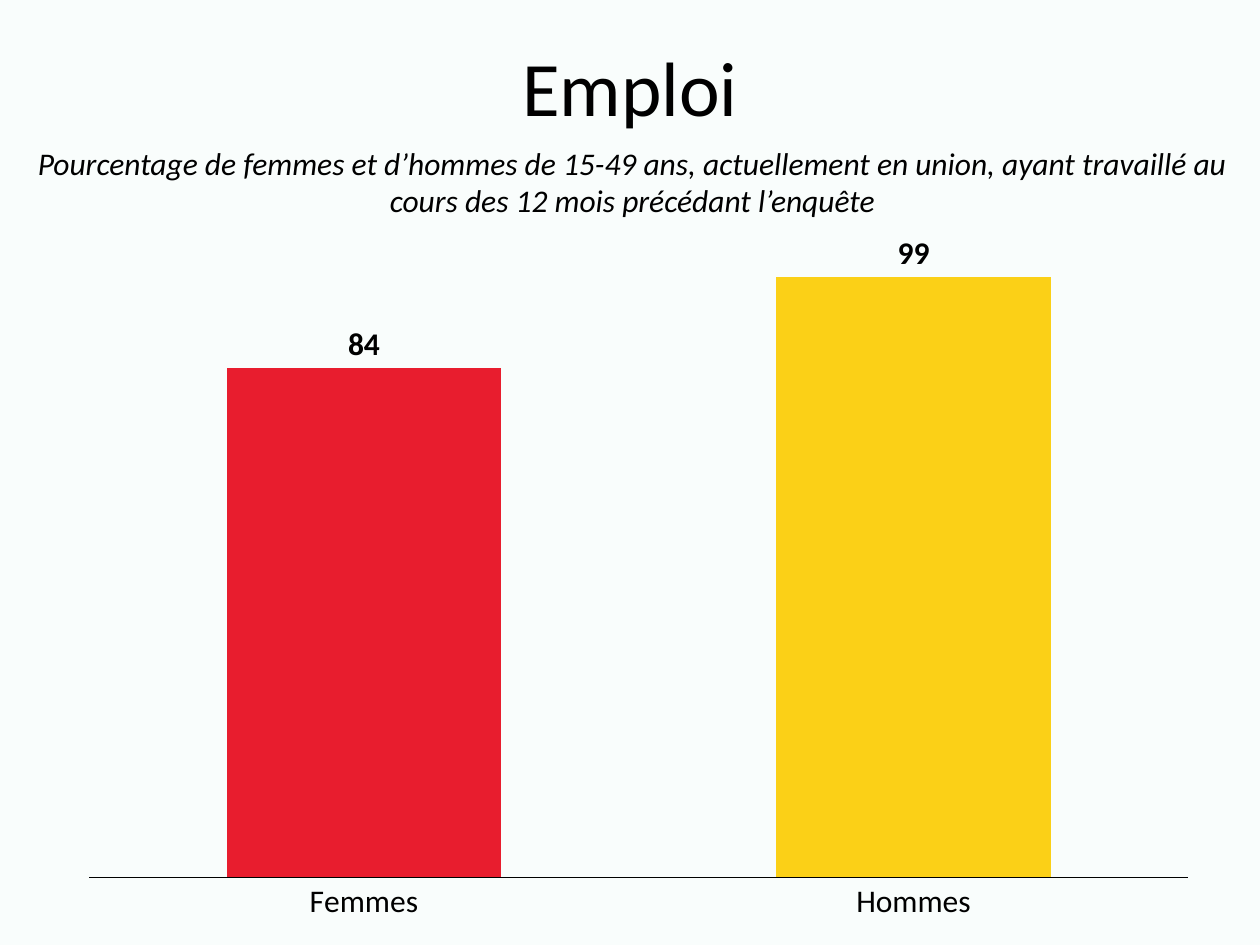
from lxml.etree import SubElement
from pptx import Presentation
from pptx.chart.data import CategoryChartData
from pptx.dml.color import RGBColor
from pptx.enum.chart import XL_CHART_TYPE, XL_LABEL_POSITION, XL_TICK_MARK
from pptx.enum.text import MSO_ANCHOR, PP_ALIGN
from pptx.oxml.ns import qn
from pptx.util import Inches, Pt

BLACK = RGBColor(0x00, 0x00, 0x00)
RED = RGBColor(0xE8, 0x1D, 0x2E)
YELLOW = RGBColor(0xFB, 0xD0, 0x17)
PALE = RGBColor(0xF9, 0xFD, 0xFC)
FONT = "Calibri"


def style(font, size, bold=False, italic=False):
    """Set the common typeface and black colour at a given size."""
    font.name, font.size = FONT, Pt(size)
    font.bold, font.italic = bold, italic
    font.color.rgb = BLACK


def place(sp, left, top, width, height):
    """Position a shape, in inches."""
    sp.left, sp.top = Inches(left), Inches(top)
    sp.width, sp.height = Inches(width), Inches(height)


prs = Presentation()
prs.slide_width, prs.slide_height = Inches(10), Inches(7.5)
slide = prs.slides.add_slide(prs.slide_layouts[5])
slide.background.fill.solid()
slide.background.fill.fore_color.rgb = PALE

# Title
title = slide.shapes.title
place(title, 0, 0, 10, 1.45)
tf = title.text_frame
tf.text = "Emploi"
tf.vertical_anchor = MSO_ANCHOR.MIDDLE
p = tf.paragraphs[0]
p.alignment = PP_ALIGN.CENTER
p.line_spacing = 0.9
style(p.runs[0].font, 44)

# Column chart
data = CategoryChartData()
data.categories = ["Femmes", "Hommes"]
data.add_series("Series 1", (84, 99))
chart = slide.shapes.add_chart(
    XL_CHART_TYPE.COLUMN_CLUSTERED,
    Inches(0.51), Inches(1.8), Inches(9.03), Inches(5.7), data).chart
chart.has_legend = False
chart.has_title = False
style(chart.font, 10)

category_axis = chart.category_axis
category_axis.major_tick_mark = XL_TICK_MARK.NONE
category_axis.format.line.color.rgb = BLACK
category_axis.format.line.width = Pt(0.75)
style(category_axis.tick_labels.font, 18)

value_axis = chart.value_axis
value_axis.minimum_scale, value_axis.maximum_scale = 0, 100
value_axis.has_major_gridlines = False
value_axis.visible = False

plot = chart.plots[0]
plot.gap_width = 100
plot.vary_by_categories = False
series = plot.series[0]
series.format.fill.solid()
series.format.fill.fore_color.rgb = RED
for i, color in enumerate((RED, YELLOW)):
    fill = series.points[i].format.fill
    fill.solid()
    fill.fore_color.rgb = color

labels = series.data_labels
labels.show_value = True
labels.position = XL_LABEL_POSITION.OUTSIDE_END
style(labels.font, 18, bold=True)

# Inner plot area, as shares of the chart
plot_area = plot_area_xml = chart.plots[0]._element.getparent()
layout = plot_area.find(qn("c:layout"))
if layout is None:
    layout = SubElement(plot_area, qn("c:layout"))
    plot_area.insert(0, layout)
manual = SubElement(layout, qn("c:manualLayout"))
for tag, value in (("layoutTarget", "inner"), ("xMode", "edge"), ("yMode", "edge"),
                   ("x", "0.022"), ("y", "0.062"), ("w", "0.966"), ("h", "0.844")):
    SubElement(manual, qn(f"c:{tag}")).set("val", value)

# Subtitle
subtitle = slide.shapes.add_textbox(0, 0, 0, 0)
place(subtitle, 0.02, 1.09, 10, 0.71)
tf = subtitle.text_frame
tf.word_wrap = True
tf.text = ("Pourcentage de femmes et d’hommes de 15-49 ans, actuellement en union, "
           "ayant travaillé au cours des 12 mois précédant l’enquête")
p = tf.paragraphs[0]
p.alignment = PP_ALIGN.CENTER
style(p.runs[0].font, 18, italic=True)

prs.save("out.pptx")
